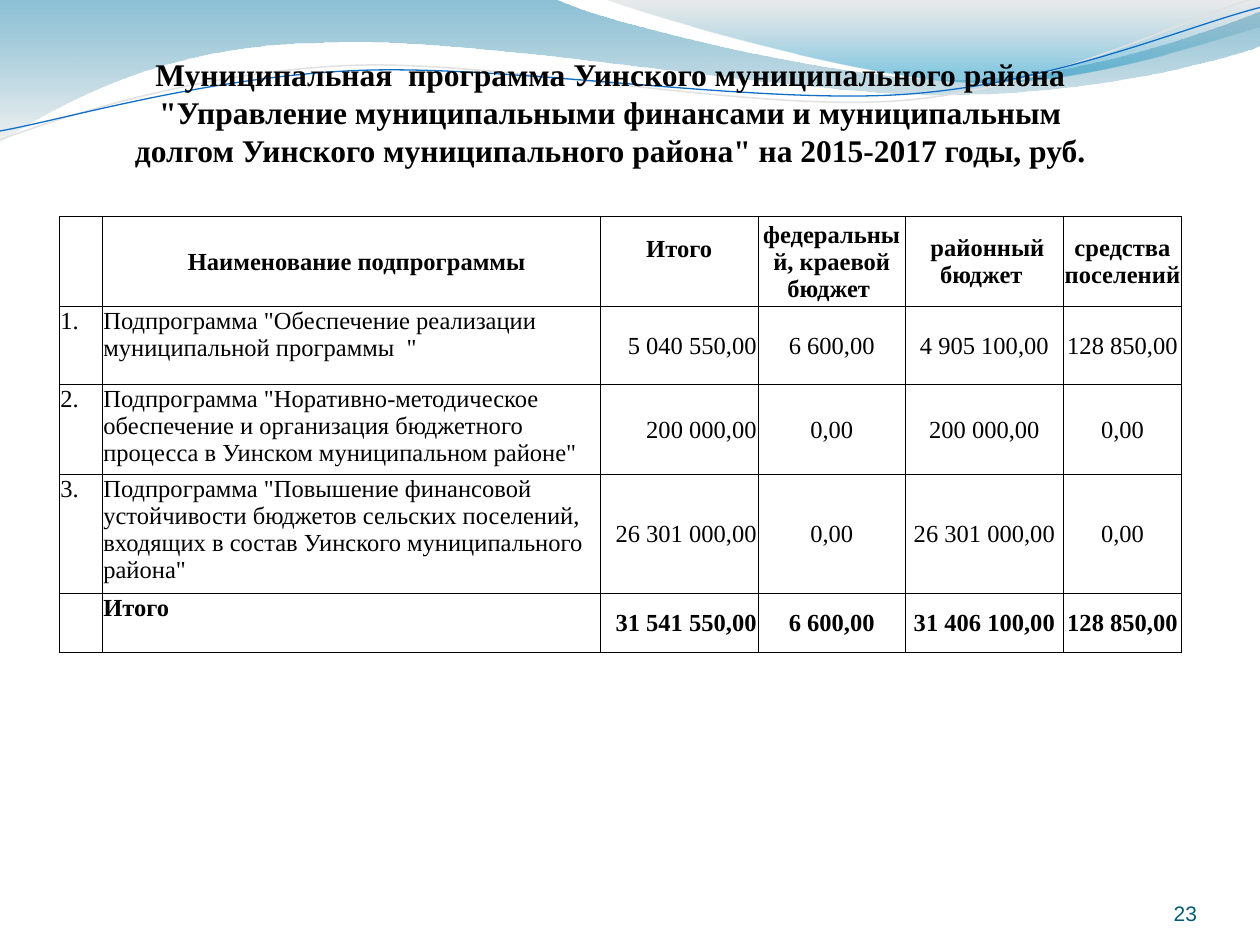
from math import cos, radians, sin

from lxml.etree import SubElement
from pptx import Presentation
from pptx.dml.color import RGBColor
from pptx.enum.text import MSO_ANCHOR as ANCHOR, MSO_AUTO_SIZE as FIT, PP_ALIGN as ALIGN
from pptx.oxml import parse_xml
from pptx.oxml.ns import nsdecls, qn
from pptx.util import Inches, Pt

BLACK = RGBColor(0x00, 0x00, 0x00)
TEAL = RGBColor(0x04, 0x5D, 0x75)
DEEP = RGBColor(0x00, 0x74, 0xA1)
MIST = RGBColor(0xE7, 0xE7, 0xE7)
GREY = RGBColor(0xBD, 0xBD, 0xBD)
AQUA = RGBColor(0x00, 0x8B, 0xBF)
PALE = RGBColor(0xE1, 0xE1, 0xE1)
BLUE = RGBColor(0x0F, 0x6F, 0xC6)
SERIF = "Times New Roman"

W, H = Inches(10), Inches(7.5)
U = W // 10
TILT = 357.3

BANDS = [
    ([(0, -0.01), (4.4, -0.01),
      (4.76, 0.17, 6.64, 0.63, 7.58, 0.63), (8.53, 0.63, 9.58, 0.26, 10, 0.09),
      (10.01, 0.36), (9.83, 0.44, 8.7, 0.76, 7.46, 0.75),
      (6.22, 0.75, 3.82, 0.28, 2.57, 0.34), (1.29, 0.35, 0.46, 0.83, -0.01, 1.13),
      (0, -0.01)],
     [(0, DEEP, 45), (1, MIST, 55)]),
    ([(4.79, -0.01), (5.09, 0.11, 6.82, 0.62, 7.69, 0.65),
      (8.56, 0.69, 9.61, 0.32, 10, 0.21), (10, 0), (4.79, -0.01)],
     [(0, GREY, 30), (0.8, AQUA, 45)]),
]
STRANDS = [
    ([(0, 1.11), (0.48, 0.93, 1.58, 0.57, 2.77, 0.52),
      (3.95, 0.47, 5.93, 0.89, 7.13, 0.8), (8.33, 0.71, 9.38, 0.15, 9.98, -0.02)],
     PALE, 0.85),
    ([(0, 1.04), (0.47, 0.96, 1.64, 0.61, 2.83, 0.56),
      (4.03, 0.51, 5.97, 0.83, 7.17, 0.75), (8.36, 0.67, 9.41, 0.21, 10, 0.06)],
     BLUE, 0.75),
]

TITLE = ('Муниципальная  программа Уинского муниципального района "Управление '
         'муниципальными финансами и муниципальным долгом Уинского '
         'муниципального района" на 2015-2017 годы, руб.')
COLS = [0.34, 3.95, 1.25, 1.17, 1.25, 0.94]
ROWS = [0.7, 0.62, 0.7, 0.87, 0.47]
CELLS = [
    ["", " Наименование подпрограммы ", "Итого", "федеральный, краевой бюджет ",
     " районный бюджет ", "средства поселений "],
    ["1.", 'Подпрограмма "Обеспечение реализации муниципальной программы  "',
     "5 040 550,00", "6 600,00", "4 905 100,00", "128 850,00"],
    ["2.", 'Подпрограмма "Норативно-методическое обеспечение и организация '
     'бюджетного процесса в Уинском муниципальном районе"',
     "200 000,00", "0,00", "200 000,00", "0,00"],
    ["3.", 'Подпрограмма "Повышение финансовой устойчивости бюджетов сельских '
     'поселений, входящих в состав Уинского муниципального  района"',
     "26 301 000,00", "0,00", "26 301 000,00", "0,00"],
    ["", "Итого", "31 541 550,00", "6 600,00", "31 406 100,00", "128 850,00"],
]


def turn(pts, angle):
    """Rotate points about the grid corner."""
    c, n = cos(radians(angle)), sin(radians(angle))
    return [(x * c - y * n, x * n + y * c) for x, y in pts]


def add_curve(s, box, path, close, angle=0):
    """Draw straight and cubic segments as one outline, tilted by an angle."""
    left, top = box[:2]
    pts = [(left + seg[i], top + seg[i + 1]) for seg in path for i in range(0, len(seg), 2)]
    flat = [(round(x * U), round(y * U)) for x, y in turn(pts, -angle)]
    fb = s.shapes.build_freeform(*flat[0], scale=1.0)
    fb.add_line_segments(flat[1:], close=close)
    sp = fb.convert_to_shape()
    sp.shadow.inherit = False
    lines = iter(list(sp._element.spPr.iter(qn("a:lnTo"))))
    for seg in path[1:]:
        first = next(lines)
        if len(seg) == 6:
            first.tag = qn("a:cubicBezTo")
            for _ in range(2):
                line = next(lines)
                first.append(line[0])
                line.getparent().remove(line)
    mid = (sp.left + sp.width / 2, sp.top + sp.height / 2)
    x, y = turn([mid], angle)[0]
    sp.left, sp.top = round(x - sp.width / 2), round(y - sp.height / 2)
    sp.rotation = angle
    return sp


def add_waves(s, box):
    """Draw the translucent bands and thin strands of the header."""
    for path, stops in BANDS:
        sp = add_curve(s, box, path, True)
        sp.line.fill.background()
        sp.fill.gradient()
        sp.fill.gradient_angle = 270
        for stop, (pos, color, _) in zip(sp.fill.gradient_stops, stops):
            stop.position = pos
            stop.color.rgb = color
        colors = sp._element.spPr.iter(qn("a:srgbClr"))
        for clr, (_, _, alpha) in zip(colors, stops):
            SubElement(clr, qn("a:alpha")).set("val", str(alpha * 1000))
    for path, color, width in STRANDS:
        sp = add_curve(s, box, path, False, TILT)
        sp.fill.background()
        sp.line.color.rgb = color
        sp.line.width = Pt(width)


def add_run(p, text, size, font, color, bold=False):
    """Append one styled run to a paragraph."""
    r = p.add_run()
    r.text = text
    r.font.size, r.font.name, r.font.bold = Pt(size), font, bold
    r.font.color.rgb = color


def add_text(s, box, align, text, *style):
    """Place a wrapping text box and return its frame."""
    tf = s.shapes.add_textbox(*(round(v * U) for v in box)).text_frame
    tf.word_wrap = True
    p = tf.paragraphs[0]
    p.alignment = align
    add_run(p, text, *style)
    return tf


def add_title(s, box):
    """Place the centred heading."""
    tf = add_text(s, box, ALIGN.CENTER, TITLE, 18, SERIF, BLACK, True)
    tf.auto_size = FIT.SHAPE_TO_FIT_TEXT


def add_number(s, box):
    """Place the slide number at the bottom right of its box."""
    tf = add_text(s, box, ALIGN.RIGHT, "23", 12, "Arial", TEAL)
    tf.margin_left = tf.margin_right = tf.margin_top = tf.margin_bottom = 0
    tf.vertical_anchor = ANCHOR.BOTTOM


def style_cell(cell, i, j, text):
    """Fill one cell with its text, margins and borders."""
    head, total = i == 0, i == len(ROWS) - 1
    cell.fill.background()
    for n, side in enumerate(("lnL", "lnR", "lnT", "lnB")):
        ln = parse_xml(f'<a:{side} {nsdecls("a")} w="{Pt(0.5)}"><a:solidFill>'
                       f'<a:srgbClr val="{BLACK}"/></a:solidFill></a:{side}>')
        cell._tc.get_or_add_tcPr().insert(n, ln)
    cell.margin_left = Inches(0.1 if head and j == 1 else 0.01)
    cell.margin_right = cell.margin_top = Inches(0.01)
    cell.margin_bottom = Inches(0.21 if head and j == 2 else 0)
    cell.vertical_anchor = ANCHOR.MIDDLE if head or j > 1 else ANCHOR.TOP
    p = cell.text_frame.paragraphs[0]
    p.alignment = (ALIGN.CENTER if head or j > 2
                   else ALIGN.RIGHT if j == 2 else ALIGN.LEFT)
    if text:
        add_run(p, text, 14, SERIF, BLACK, head or total)


def add_budget(s, box):
    """Place the budget table, sharing the box out by column and row."""
    x, y, w, h = (round(v * U) for v in box)
    tbl = s.shapes.add_table(len(ROWS), len(COLS), x, y, w, h).table
    tbl.first_row = tbl.horz_banding = False
    for col, share in zip(tbl.columns, COLS):
        col.width = round(w * share / sum(COLS))
    for row, share in zip(tbl.rows, ROWS):
        row.height = round(h * share / sum(ROWS))
    for i, texts in enumerate(CELLS):
        for j, text in enumerate(texts):
            style_cell(tbl.cell(i, j), i, j, text)


def main():
    """Build and save the slide."""
    prs = Presentation()
    prs.slide_width, prs.slide_height = W, H
    s = prs.slides.add_slide(prs.slide_layouts[6])
    add_waves(s, (0, 0, 10, 1.14))
    add_number(s, (8.67, 6.95, 0.83, 0.4))
    add_budget(s, (0.47, 1.72, 8.91, 3.37))
    add_title(s, (0.94, 0.39, 7.81, 1.01))
    prs.save("out.pptx")


if __name__ == "__main__":
    main()
